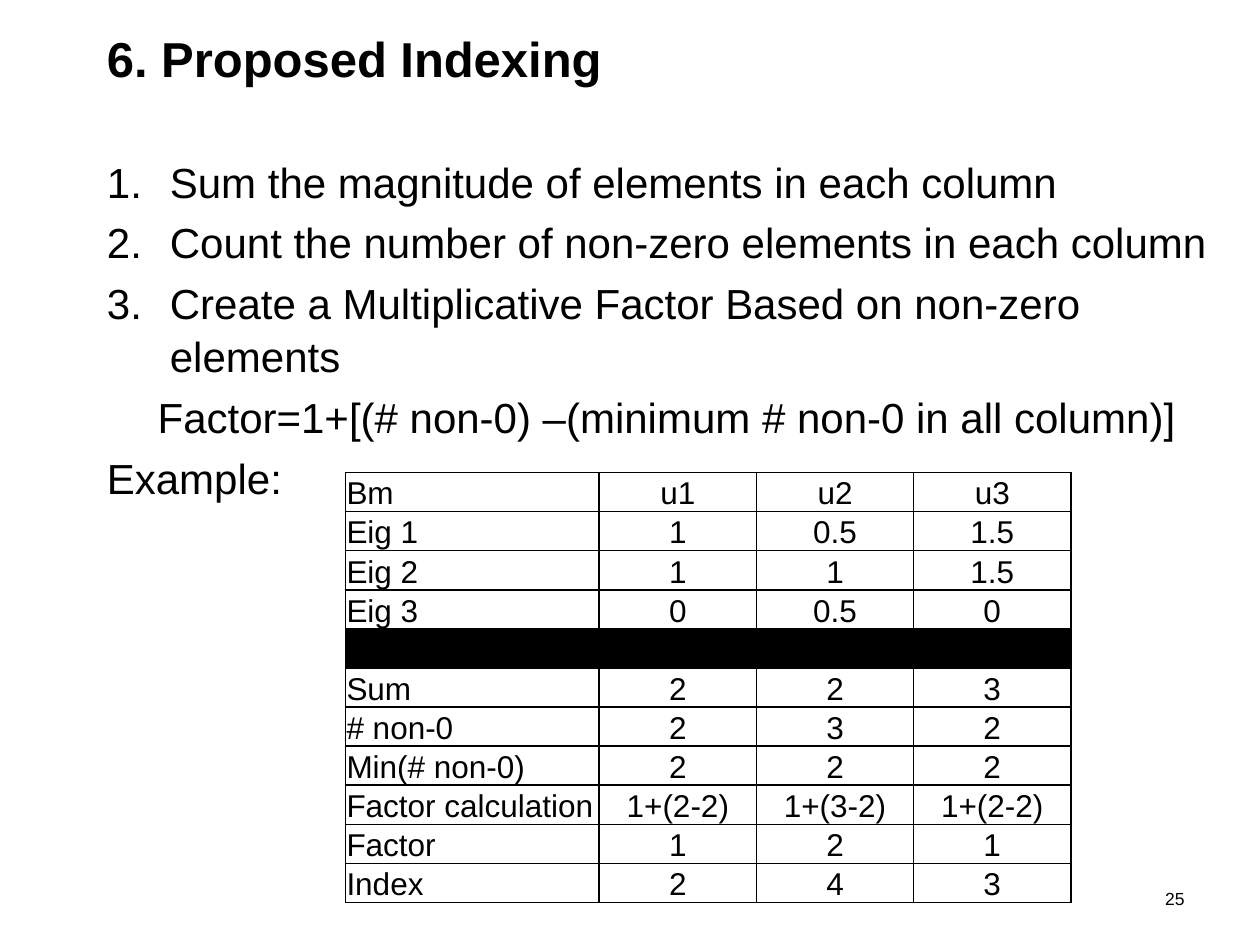
from lxml import etree
from pptx import Presentation, util as u
from pptx.dml.color import RGBColor
from pptx.enum import text
from pptx.oxml import ns

BLACK = RGBColor(0, 0, 0)
WHITE = RGBColor(255, 255, 255)
FONT = "Arial"
WIDTH, HEIGHT = u.Inches(10), u.Inches(7.5)
ALIGN = text.PP_ALIGN

STEPS = [
    "Sum the magnitude of elements in each column",
    "Count the number of non-zero elements in each column",
    "Create a Multiplicative Factor Based on non-zero elements",
]
FORMULA = "Factor=1+[(# non-0) –(minimum # non-0 in all column)]"
ROWS = [
    ["Bm", "u1", "u2", "u3"],
    ["Eig 1", "1", "0.5", "1.5"],
    ["Eig 2", "1", "1", "1.5"],
    ["Eig 3", "0", "0.5", "0"],
    [""] * 4,
    ["Sum", "2", "2", "3"],
    ["# non-0", "2", "3", "2"],
    ["Min(# non-0)", "2", "2", "2"],
    ["Factor calculation", "1+(2-2)", "1+(3-2)", "1+(2-2)"],
    ["Factor", "1", "2", "1"],
    ["Index", "2", "4", "3"],
]
COLUMN_SHARES = [0.35] + [0.65 / 3] * 3


def area(left, top, width, height):
    return (int(left * WIDTH), int(top * HEIGHT),
            int(width * WIDTH), int(height * HEIGHT))


def style(para, size, align=ALIGN.LEFT, bold=False):
    para.alignment = align
    for font in [para.font] + [span.font for span in para.runs]:
        font.name, font.size, font.bold = FONT, u.Pt(size), bold
        font.color.rgb = BLACK


def add_text(page, box, lines, size, align=ALIGN.LEFT, bold=False,
             anchor=text.MSO_ANCHOR.TOP):
    frame = page.shapes.add_textbox(*box).text_frame
    frame.word_wrap = True
    frame.vertical_anchor = anchor
    frame.text = "\n".join(lines)
    for para in frame.paragraphs:
        style(para, size, align, bold)
    return frame.paragraphs


def number(para):
    props = para._p.get_or_add_pPr()
    props.set("marL", str(u.Inches(0.5)))
    props.set("indent", str(-u.Inches(0.5)))
    bullet = props.makeelement(ns.qn("a:buAutoNum"), {"type": "arabicPeriod"})
    props.insert_element_before(bullet, "a:tabLst", "a:defRPr", "a:extLst")


def add_steps(page, box):
    paras = add_text(page, box, STEPS + [FORMULA, "Example:"], 24)
    for index, para in enumerate(paras):
        para.line_spacing = 1.05
        para.space_before = u.Pt(4.5 if index else 0)
    for para in paras[:len(STEPS)]:
        number(para)
    paras[len(STEPS)].alignment = ALIGN.CENTER


def add_borders(cell):
    props = cell._tc.get_or_add_tcPr()
    for index, side in enumerate(("lnL", "lnR", "lnT", "lnB")):
        line = props.makeelement(ns.qn(f"a:{side}"), {"w": str(u.Pt(1))})
        fill = etree.SubElement(line, ns.qn("a:solidFill"))
        etree.SubElement(fill, ns.qn("a:srgbClr"), val=str(BLACK))
        props.insert(index, line)


def fill_cell(cell, value, align, fill):
    cell.fill.solid()
    cell.fill.fore_color.rgb = fill
    cell.margin_left = cell.margin_right = cell.margin_top = u.Inches(0.01)
    cell.margin_bottom = 0
    cell.vertical_anchor = text.MSO_ANCHOR.BOTTOM
    cell.text = value
    style(cell.text_frame.paragraphs[0], 18, align)
    add_borders(cell)


def add_index_table(page, box):
    table = page.shapes.add_table(len(ROWS), len(COLUMN_SHARES), *box).table
    table.first_row = table.horz_banding = False
    for column, share in zip(table.columns, COLUMN_SHARES):
        column.width = int(share * box[2])
    for row, values in zip(table.rows, ROWS):
        divider = not any(values)
        row.height = u.Inches(0.31 if divider else 0.29)
        for index, (cell, value) in enumerate(zip(row.cells, values)):
            fill_cell(cell, value, ALIGN.CENTER if index else ALIGN.LEFT,
                      BLACK if divider else WHITE)


def main():
    deck = Presentation()
    deck.slide_width, deck.slide_height = WIDTH, HEIGHT
    page = deck.slides.add_slide(deck.slide_layouts[6])
    add_text(page, area(0.075, 0, 0.6, 0.123), ["6. Proposed Indexing"], 28,
             bold=True, anchor=text.MSO_ANCHOR.MIDDLE)
    add_steps(page, area(0.075, 0.156, 0.908, 0.733))
    add_text(page, area(0.717, 0.933, 0.233, 0.047), ["25"], 10, ALIGN.RIGHT)
    add_index_table(page, area(0.274, 0.5, 0.576, 0.43))
    deck.save("out.pptx")


if __name__ == "__main__":
    main()
